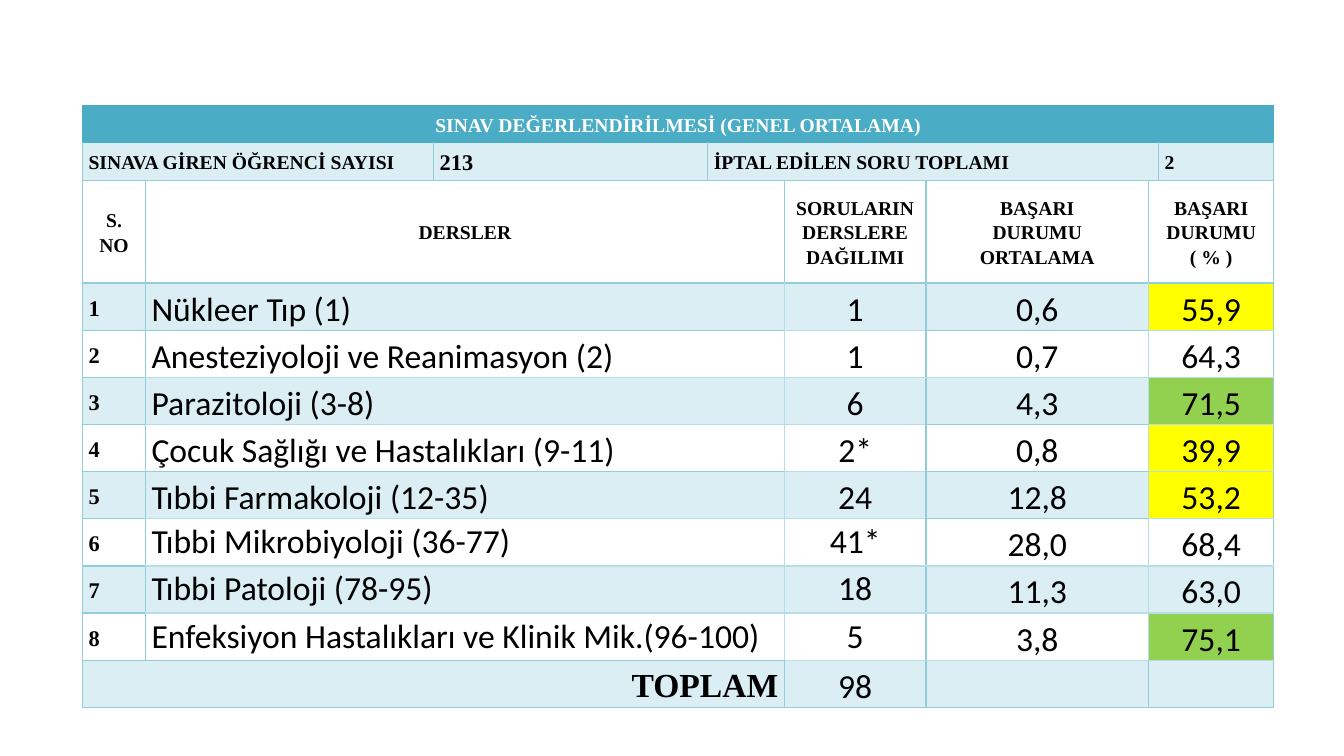
from lxml.etree import fromstring
from pptx import Presentation
from pptx.dml.color import RGBColor
from pptx.enum.text import MSO_ANCHOR, PP_ALIGN
from pptx.util import Pt

SERIF, SANS = "Times New Roman", "Calibri"
TEAL, EDGE, PALE = "4BACC6", "92CDDC", "B7DEE8"
ICE, MIST, YELLOW, GREEN = "DAEEF3", "DBEEF4", "FFFF00", "92D050"
LEFT, MID, RIGHT = PP_ALIGN.LEFT, PP_ALIGN.CENTER, PP_ALIGN.RIGHT
NS = "http://schemas.openxmlformats.org/drawingml/2006/main"


def color(code):
    return RGBColor.from_string(code)


def put(row, first, last, text, size=14, align=LEFT, fill=None, font=SERIF,
        ink="000000", edges=(EDGE,) * 4, space=1.15):
    """Fill one cell, merged from first to last; edges run left, right, top, bottom."""
    cell = table.cell(row, first)
    if last > first:
        cell.merge(table.cell(row, last))
    cell.margin_left = cell.margin_right = Pt(4.3)
    cell.margin_top = cell.margin_bottom = 0
    cell.vertical_anchor = MSO_ANCHOR.MIDDLE
    if fill:
        cell.fill.solid()
        cell.fill.fore_color.rgb = color(fill)
    else:
        cell.fill.background()
    para = cell.text_frame.paragraphs[0]
    if text:
        para.text = text
    para.alignment = align
    para.line_spacing = space
    para.font.name, para.font.size = font, Pt(size)
    para.font.bold = font == SERIF
    para.font.color.rgb = color(ink)
    props = cell._tc.get_or_add_tcPr()
    for spot, (side, code) in enumerate(zip("LRTB", edges)):
        props.insert(spot, fromstring(
            f'<a:ln{side} xmlns:a="{NS}" w="12700"><a:solidFill>'
            f'<a:srgbClr val="{code}"/></a:solidFill></a:ln{side}>'))


deck = Presentation()
deck.slide_width, deck.slide_height = Pt(960), Pt(540)
slide = deck.slides.add_slide(deck.slide_layouts[6])

# Table grid
widths = [45, 205.8, 195.8, 54.7, 101.2, 159, 7.2, 82.3]
heights = [26, 27.2, 73.4] + [32] * 9
table = slide.shapes.add_table(len(heights), len(widths), Pt(59), Pt(75.6),
                               Pt(sum(widths)), Pt(sum(heights))).table
table.first_row = table.horz_banding = False
for col, width in zip(table.columns, widths):
    col.width = Pt(width)
for line, height in zip(table.rows, heights):
    line.height = Pt(height)

# Title and summary
put(0, 0, 7, "SINAV DEĞERLENDİRİLMESİ (GENEL ORTALAMA)", align=MID, fill=TEAL,
    ink="FFFFFF", edges=(TEAL,) * 4)
for first, last, text, size in [
    (0, 1, "SINAVA GİREN ÖĞRENCİ SAYISI", 14),
    (2, 2, "213", 16),
    (3, 6, "İPTAL EDİLEN SORU TOPLAMI", 14),
    (7, 7, "2", 14),
]:
    put(1, first, last, text, size, fill=ICE, edges=(EDGE, EDGE, TEAL, EDGE))

# Column heads
spans = [(0, 0), (1, 3), (4, 4), (5, 5), (6, 7)]
heads = ["S.\nNO", "DERSLER", "SORULARIN\nDERSLERE\nDAĞILIMI",
         "BAŞARI\nDURUMU\nORTALAMA", "BAŞARI\nDURUMU\n( % )"]
for (first, last), text in zip(spans, heads):
    put(2, first, last, text, align=MID)

# Courses, with a mark colour for low or high success
courses = [
    ("Nükleer Tıp (1)", "1", "0,6", "55,9", YELLOW),
    ("Anesteziyoloji ve Reanimasyon (2)", "1", "0,7", "64,3", None),
    ("Parazitoloji (3-8)", "6", "4,3", "71,5", GREEN),
    ("Çocuk Sağlığı ve Hastalıkları (9-11)", "2*", "0,8", "39,9", YELLOW),
    ("Tıbbi Farmakoloji (12-35)", "24", "12,8", "53,2", YELLOW),
    ("Tıbbi Mikrobiyoloji (36-77)", "41*", "28,0", "68,4", None),
    ("Tıbbi Patoloji (78-95)", "18", "11,3", "63,0", None),
    ("Enfeksiyon Hastalıkları ve Klinik Mik.(96-100)", "5", "3,8", "75,1", GREEN),
]
dark = {1: (0, 1, 4), 4: (0,), 5: (0, 1, 3, 4, 5), 6: (0,)}  # rows with a darker lower edge
for num, (*texts, mark) in enumerate(courses, 1):
    row = num + 2
    band = (MIST if num < 7 else ICE) if num % 2 else None
    put(row, 0, 0, str(num), 16, fill=ICE if band else None)
    for (first, last), text in zip(spans[1:], texts):
        sides = (EDGE, PALE) if first in (1, 5) else (PALE, EDGE)
        ends = tuple(EDGE if at in dark[first] else PALE for at in (num - 1, num))
        tight = num > 5 and first < 5
        put(row, first, last, text, 24, LEFT if first == 1 else MID,
            mark if mark and first == 6 else band, SANS,
            edges=sides + ends, space=1.0 if tight else 1.15)

# Total
put(11, 0, 3, "TOPLAM", 24, RIGHT, ICE)
for (first, last), text in zip(spans[2:], ["98", "", ""]):
    put(11, first, last, text, 24, MID, ICE, SANS, edges=(EDGE, EDGE, PALE, EDGE))

deck.save("out.pptx")
